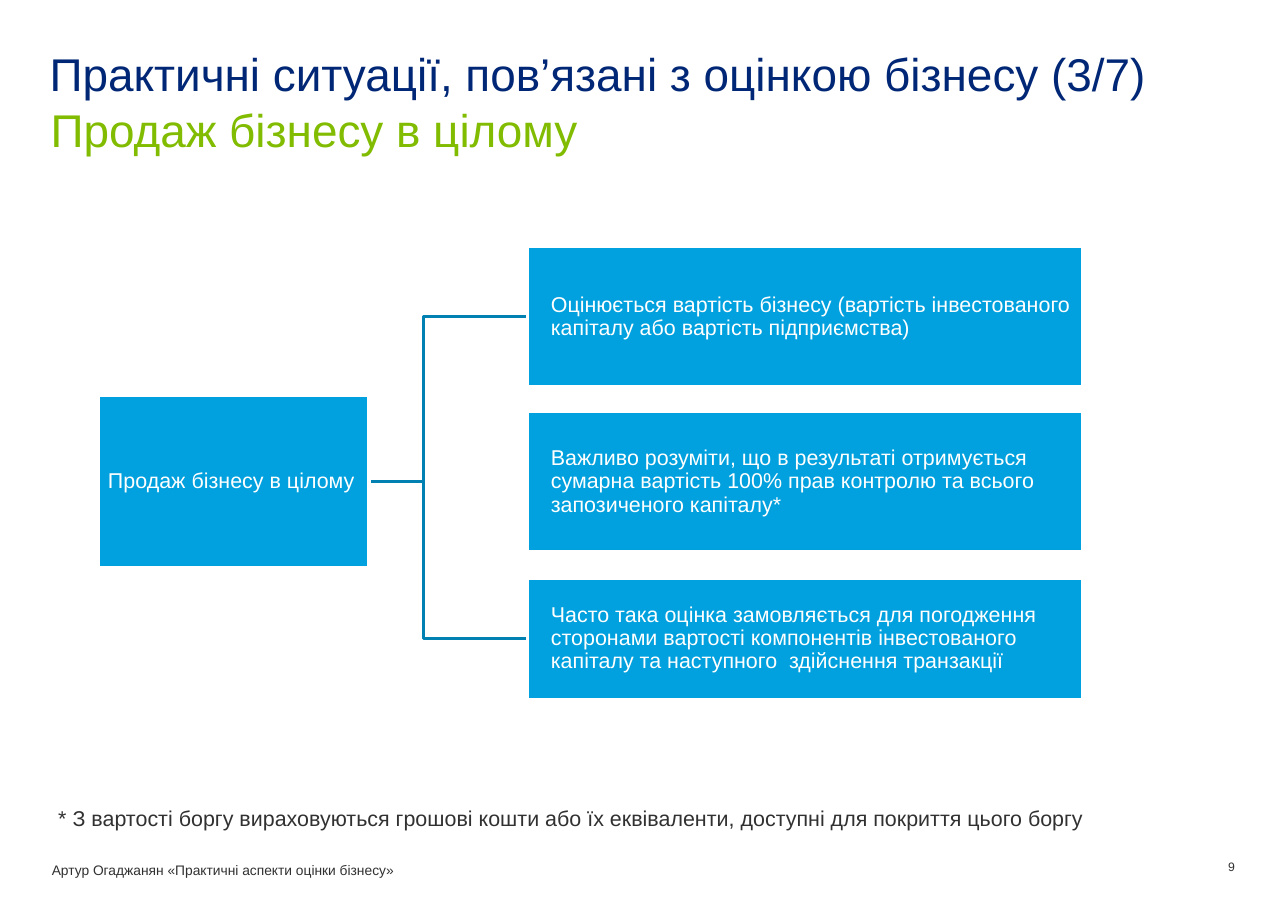
from dataclasses import dataclass
from pptx import Presentation
from pptx.dml.color import RGBColor
from pptx.enum.shapes import MSO_SHAPE
from pptx.enum.text import MSO_ANCHOR, MSO_AUTO_SIZE, PP_ALIGN
from pptx.shapes.base import BaseShape
from pptx.slide import Slide
from pptx.text.text import TextFrame
from pptx.util import Inches, Pt


@dataclass(frozen=True)
class Theme:
    font: str = "Arial"
    navy: str = "002776"
    green: str = "81BC00"
    blue: str = "00A1DE"
    bracket: str = "0081B2"
    white: str = "FFFFFF"
    dark: str = "313131"
    heading: int = 30
    body: int = 14
    footer: int = 9
    number: int = 8
    line: int = 2


@dataclass(frozen=True)
class Box:
    left: float
    top: float
    width: float
    height: float
    text: str
    indent: float

    @property
    def middle(self) -> float:
        return self.top + self.height / 2


@dataclass(frozen=True)
class Label:
    left: float
    top: float
    width: float
    height: float
    text: str
    size: int
    color: str
    inset: float = 0
    anchor: MSO_ANCHOR = MSO_ANCHOR.TOP
    align: PP_ALIGN = PP_ALIGN.LEFT
    wrap: bool = True


THEME = Theme()
COLUMN_LEFT, COLUMN_WIDTH = 4.79, 5.04
ROOT = Box(0.89, 3.59, 2.46, 1.56, "Продаж бізнесу в цілому", 0.09)
POINTS = [
    Box(COLUMN_LEFT, top, COLUMN_WIDTH, height, text, 0.21)
    for top, height, text in (
        (2.24, 1.27, "Оцінюється вартість бізнесу (вартість інвестованого "
                     "капіталу або вартість підприємства)"),
        (3.74, 1.27, "Важливо розуміти, що в результаті отримується сумарна "
                     "вартість 100% прав контролю та всього запозиченого капіталу*"),
        (5.25, 1.1, "Часто така оцінка замовляється для погодження сторонами "
                    "вартості компонентів інвестованого капіталу та наступного  "
                    "здійснення транзакції"),
    )
]
TITLE = Label(0.45, 0.41, 10.51, 0.5,
              "Практичні ситуації, пов’язані з оцінкою бізнесу (3/7)",
              THEME.heading, THEME.navy)
LABELS = [
    Label(0.46, 0.92, 9.87, 0.5, "Продаж бізнесу в цілому",
          THEME.heading, THEME.green),
    Label(0.43, 7.26, 9.62, 0.34,
          "* З вартості боргу вираховуються грошові кошти або їх еквіваленти, "
          "доступні для покриття цього боргу",
          THEME.body, THEME.dark, inset=0.1, anchor=MSO_ANCHOR.MIDDLE, wrap=False),
    Label(0.47, 7.76, 8.69, 0.28,
          "Артур Огаджанян «Практичні аспекти оцінки бізнесу»",
          THEME.footer, THEME.dark, anchor=MSO_ANCHOR.MIDDLE),
    Label(10.2, 7.72, 1.01, 0.3, "9", THEME.number, THEME.dark,
          anchor=MSO_ANCHOR.MIDDLE, align=PP_ALIGN.RIGHT),
]


def write(frame: TextFrame, text: str, size: int, color: str,
          align: PP_ALIGN = PP_ALIGN.LEFT) -> None:
    frame.text = text
    for para in frame.paragraphs:
        para.alignment = align
        for span in para.runs:
            span.font.name = THEME.font
            span.font.size = Pt(size)
            span.font.color.rgb = RGBColor.from_string(color)


def set_margins(frame: TextFrame, left: float, right: float, vertical: float) -> None:
    frame.margin_left, frame.margin_right = Inches(left), Inches(right)
    frame.margin_top = frame.margin_bottom = Inches(vertical)


def fill_label(shape: BaseShape, label: Label) -> None:
    shape.left, shape.top = Inches(label.left), Inches(label.top)
    shape.width, shape.height = Inches(label.width), Inches(label.height)
    frame = shape.text_frame
    frame.word_wrap = label.wrap
    frame.auto_size = MSO_AUTO_SIZE.NONE
    frame.vertical_anchor = label.anchor
    set_margins(frame, label.inset, label.inset, label.inset / 2)
    write(frame, label.text, label.size, label.color, label.align)


def draw_bracket(page: Slide, start: Box, end: Box) -> None:
    left = 2.9
    bend = (left + end.left) / 2
    builder = page.shapes.build_freeform(Inches(left), Inches(start.middle))
    corners = ((bend, start.middle), (bend, end.middle), (end.left, end.middle))
    builder.add_line_segments([(Inches(x), Inches(y)) for x, y in corners], close=False)
    bracket = builder.convert_to_shape()
    bracket.shadow.inherit = False
    bracket.fill.background()
    bracket.line.color.rgb = RGBColor.from_string(THEME.bracket)
    bracket.line.width = Pt(THEME.line)


def draw_box(page: Slide, box: Box) -> None:
    shape = page.shapes.add_shape(
        MSO_SHAPE.RECTANGLE, Inches(box.left), Inches(box.top),
        Inches(box.width), Inches(box.height))
    shape.shadow.inherit = False
    shape.fill.solid()
    shape.fill.fore_color.rgb = RGBColor.from_string(THEME.blue)
    shape.line.color.rgb = RGBColor.from_string(THEME.white)
    shape.line.width = Pt(THEME.line)
    frame = shape.text_frame
    frame.word_wrap = True
    frame.vertical_anchor = MSO_ANCHOR.MIDDLE
    set_margins(frame, box.indent, 0.01, 0.01)
    write(frame, box.text, THEME.body, THEME.white)
    frame.paragraphs[0].line_spacing = 0.9


def main() -> None:
    deck = Presentation()
    deck.slide_width, deck.slide_height = Inches(11.69), Inches(8.27)
    page = deck.slides.add_slide(deck.slide_layouts.get_by_name("Title Only"))
    fill_label(page.shapes.title, TITLE)
    for label in LABELS:
        fill_label(page.shapes.add_textbox(0, 0, 0, 0), label)
    for point in (POINTS[0], POINTS[-1]):
        draw_bracket(page, ROOT, point)
    for box in (ROOT, *POINTS):
        draw_box(page, box)
    deck.save("out.pptx")


if __name__ == "__main__":
    main()
